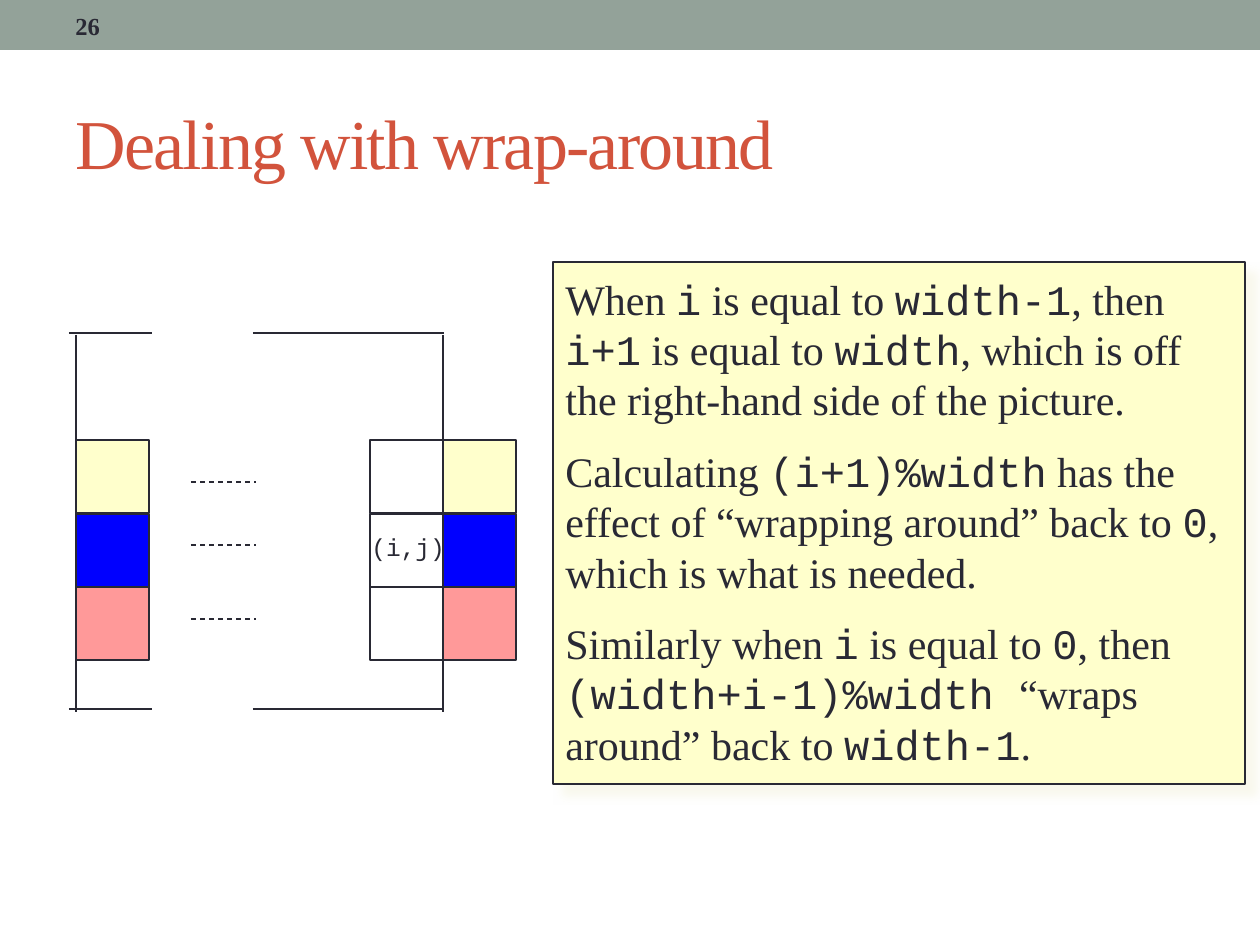
from lxml import etree
from pptx import Presentation, util as u
from pptx.dml.color import RGBColor
from pptx.enum import dml, shapes, text
from pptx.oxml.ns import qn

PX = 914400 / 126
INK, CREAM = "292934", "FFFFCC"
SERIF, MONO = "Times New Roman", "Courier New"

# Backticks enclose code
NOTES = [
    "When `i` is equal to `width-1`, then `i+1` is equal to `width`, "
    "which is off the right-hand side of the picture.",
    "Calculating `(i+1)%width` has the effect of “wrapping around” "
    "back to `0`, which is what is needed.",
    "Similarly when `i` is equal to `0`, then `(width+i-1)%width `"
    "“wraps around” back to `width-1`.",
]
CELL = 73
LEFT, RIGHT = 76, 443
ROWS = [(440, CREAM), (514, "0000FF"), (587, "FF9999")]
EDGES = (333, 709)
DASHES = (482, 545, 619)


def px(*nums):
    return [u.Emu(round(n * PX)) for n in nums]


def rgb(code):
    return RGBColor.from_string(code)


def rect(x, y, w, h, fill=None, line=INK, width=0.75):
    box = slide.shapes.add_shape(shapes.MSO_SHAPE.RECTANGLE, *px(x, y, w, h))
    box.shadow.inherit = False
    if fill:
        box.fill.solid()
        box.fill.fore_color.rgb = rgb(fill)
    else:
        box.fill.background()
    if line:
        box.line.color.rgb = rgb(line)
        box.line.width = u.Pt(width)
    else:
        box.line.fill.background()
    return box


def rule(x1, y1, x2, y2, dash=False):
    line = slide.shapes.add_connector(
        shapes.MSO_CONNECTOR.STRAIGHT, *px(x1, y1, x2, y2))
    line.line.color.rgb = rgb(INK)
    line.line.width = u.Pt(0.75)
    if dash:
        line.line.dash_style = dml.MSO_LINE.DASH
    etree.SubElement(line._element.spPr, qn("a:effectLst"))


def style(run, size, face=SERIF, color=INK, bold=False):
    font = run.font
    font.size, font.name, font.bold = u.Pt(size), face, bold
    font.color.rgb = rgb(color)


def label(x, y, w, h, words, anchor=text.MSO_ANCHOR.MIDDLE, **look):
    frame = slide.shapes.add_textbox(*px(x, y, w, h)).text_frame
    frame.word_wrap = True
    frame.vertical_anchor = anchor
    frame.text = words
    run = frame.paragraphs[0].runs[0]
    style(run, **look)
    return frame, run


def cast(box, color, alpha):
    """Give the box a soft shadow towards the lower right."""
    effects = box._element.spPr.find(qn("a:effectLst"))
    shade = etree.SubElement(
        effects, qn("a:outerShdw"), blurRad=str(u.Pt(5)),
        dist=str(u.Pt(8.5)), dir=str(45 * 60000), algn="tl", rotWithShape="0")
    tint = etree.SubElement(shade, qn("a:srgbClr"), val=color)
    etree.SubElement(tint, qn("a:alpha"), val=str(alpha * 1000))


def explain():
    box = rect(553, 262, 692, 522, CREAM, width=1)
    cast(box, "F3F2DC", 50)
    frame = box.text_frame
    frame.word_wrap = True
    frame.vertical_anchor = text.MSO_ANCHOR.TOP
    frame.margin_top, = px(11)
    for n, note in enumerate(NOTES):
        para = frame.add_paragraph() if n else frame.paragraphs[0]
        para.alignment = text.PP_ALIGN.LEFT
        para.space_before = u.Pt(12 if n else 0)
        for k, part in enumerate(note.split("`")):
            if part:
                run = para.add_run()
                run.text = part
                style(run, 24, MONO if k % 2 else SERIF)


def diagram():
    for y in EDGES:
        rule(69, y, 152, y)
        rule(253, y, RIGHT + 1, y)
    for x in (LEFT, RIGHT):
        rule(x, EDGES[0] + 2, x, EDGES[1] + 3)
    for y in DASHES:
        rule(191, y, 256, y, dash=True)
    for y, fill in ROWS:
        for x, paint in ((LEFT, fill), (RIGHT - CELL, None), (RIGHT, fill)):
            rect(x, y, CELL, CELL, paint)
    frame, _ = label(359, 524, 102, 42, "(i,j)", text.MSO_ANCHOR.TOP,
                     size=14, face=MONO)
    frame.margin_top, = px(8)


deck = Presentation()
deck.slide_width, deck.slide_height = px(1260, 945)
slide = deck.slides.add_slide(deck.slide_layouts[6])

rect(0, 0, 1260, 50, "93A299", line=None)
label(63, 3, 399, 45, "26", size=14, bold=True)
_, title = label(63, 73, 1134, 136, "Dealing with wrap-around",
                 size=40, color="D2533C")
title.font._element.set("spc", "-100")
explain()
diagram()
deck.save("out.pptx")
